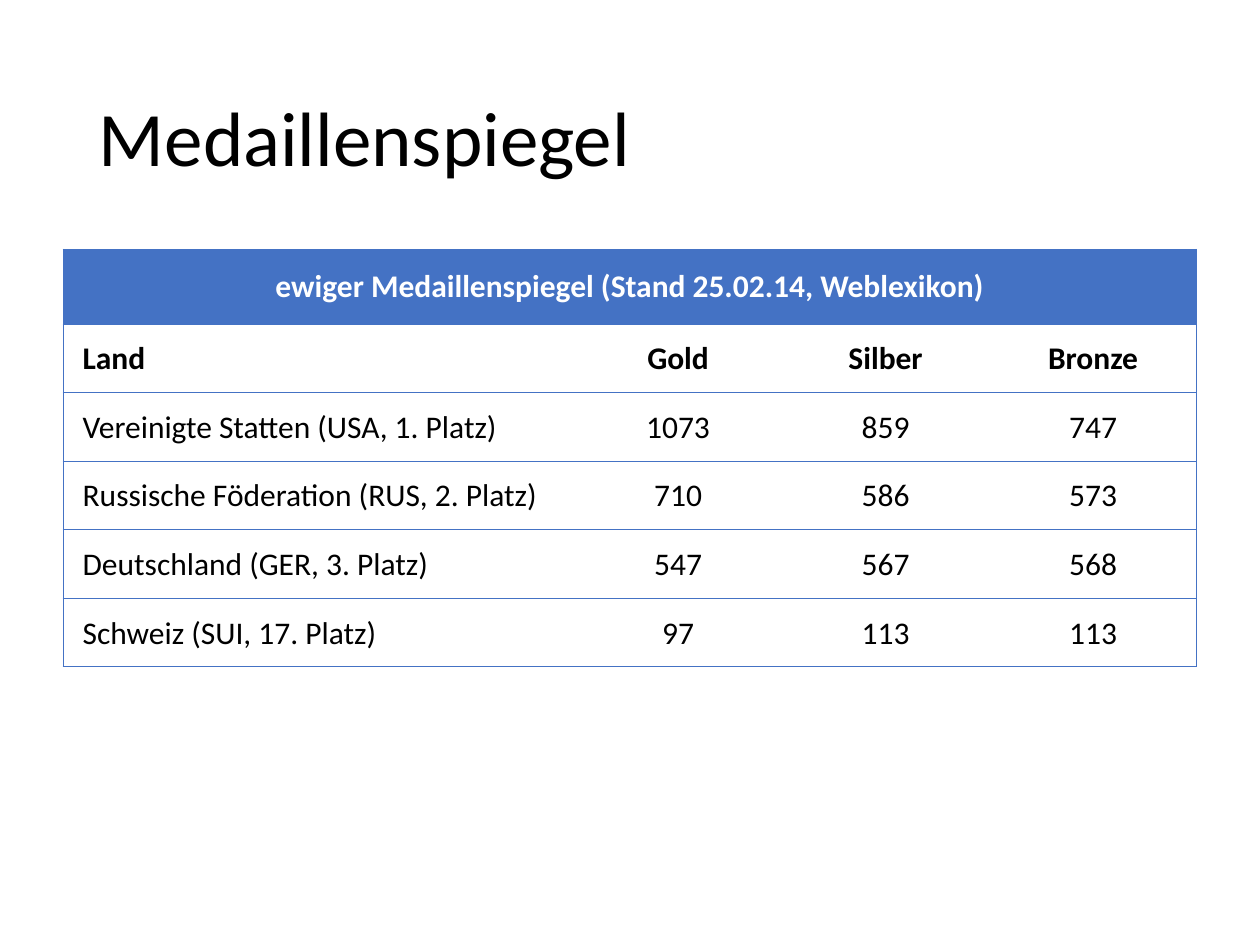
from lxml import etree
from pptx import Presentation
from pptx.dml.color import RGBColor
from pptx.enum import text
from pptx.oxml import ns
from pptx.util import Pt

BLUE, WHITE, BLACK = "4472C4", "FFFFFF", "000000"
CAPTION = "ewiger Medaillenspiegel (Stand 25.02.14, Weblexikon)"
MEDALS = [
    ("Land", "Gold", "Silber", "Bronze"),
    ("Vereinigte Statten (USA, 1. Platz)", "1073", "859", "747"),
    ("Russische Föderation (RUS, 2. Platz)", "710", "586", "573"),
    ("Deutschland (GER, 3. Platz)", "547", "567", "568"),
    ("Schweiz (SUI, 17. Platz)", "97", "113", "113"),
]
COLUMN_WIDTHS = [292.2] + [118.6] * 3
ROW_HEIGHTS = [42.7] + [39.2] * len(MEDALS)


def color(hex_string):
    return RGBColor.from_string(hex_string)


class SlideBuilder:
    def __init__(self, slide, font="Calibri", border=0.5):
        self.slide, self.font, self.border = slide, font, border

    def style(self, paragraph, size, hex_color, bold=False, centered=False):
        paragraph.alignment = text.PP_ALIGN.CENTER if centered else text.PP_ALIGN.LEFT
        for run in paragraph.runs:
            run.font.name, run.font.size, run.font.bold = self.font, Pt(size), bold
            run.font.color.rgb = color(hex_color)

    def title(self, words, left, top, width, height):
        text_frame = self.slide.shapes.add_textbox(
            Pt(left), Pt(top), Pt(width), Pt(height)).text_frame
        text_frame.word_wrap = True
        text_frame.vertical_anchor = text.MSO_ANCHOR.MIDDLE
        text_frame.text = words
        text_frame.paragraphs[0].line_spacing = 0.9
        self.style(text_frame.paragraphs[0], 44, BLACK)

    def edge(self, cell, side, visible):
        """Draw or hide the border on one side: L, R, T or B."""
        properties = cell._tc.get_or_add_tcPr()
        line = etree.SubElement(properties, ns.qn(f"a:ln{side}"), w=str(Pt(self.border)))
        if visible:
            fill = etree.SubElement(line, ns.qn("a:solidFill"))
            etree.SubElement(fill, ns.qn("a:srgbClr"), val=BLUE)
        else:
            etree.SubElement(line, ns.qn("a:noFill"))

    def cell(self, cell, words, row, column, last_column):
        is_caption, is_heading = row == 0, row == 1
        for side in "LRTB":
            inner = (side == "L" and column > 0) or (side == "R" and column < last_column)
            self.edge(cell, side, is_caption or not inner)
        cell.fill.solid()
        cell.fill.fore_color.rgb = color(BLUE if is_caption else WHITE)
        cell.vertical_anchor = text.MSO_ANCHOR.MIDDLE
        if row > 1:
            cell.margin_left = cell.margin_right = cell.margin_top = Pt(0.75)
            cell.margin_bottom = Pt(0)
        if row > 0 and column == 0:
            cell.margin_left = Pt(11.25)
        cell.text_frame.text = words
        self.style(cell.text_frame.paragraphs[0], 18, WHITE if is_caption else BLACK,
                   is_caption or is_heading, is_caption or column > 0)

    def table(self, rows, left, top, widths, heights):
        table = self.slide.shapes.add_table(
            len(rows), len(widths), Pt(left), Pt(top),
            Pt(sum(widths)), Pt(sum(heights))).table
        for column, width in zip(table.columns, widths):
            column.width = Pt(width)
        for row, height in zip(table.rows, heights):
            row.height = Pt(height)
        table.cell(0, 0).merge(table.cell(0, len(widths) - 1))
        for r, row in enumerate(rows):
            for c, words in enumerate(row):
                self.cell(table.cell(r, c), words, r, c, len(widths) - 1)


def main():
    presentation = Presentation()
    presentation.slide_width, presentation.slide_height = Pt(720), Pt(540)
    builder = SlideBuilder(presentation.slides.add_slide(presentation.slide_layouts[6]))
    builder.title("Medaillenspiegel", 49.5, 28.75, 621, 104.4)
    builder.table([(CAPTION, "", "", "")] + MEDALS, 36, 142.5, COLUMN_WIDTHS, ROW_HEIGHTS)
    presentation.save("out.pptx")


if __name__ == "__main__":
    main()
